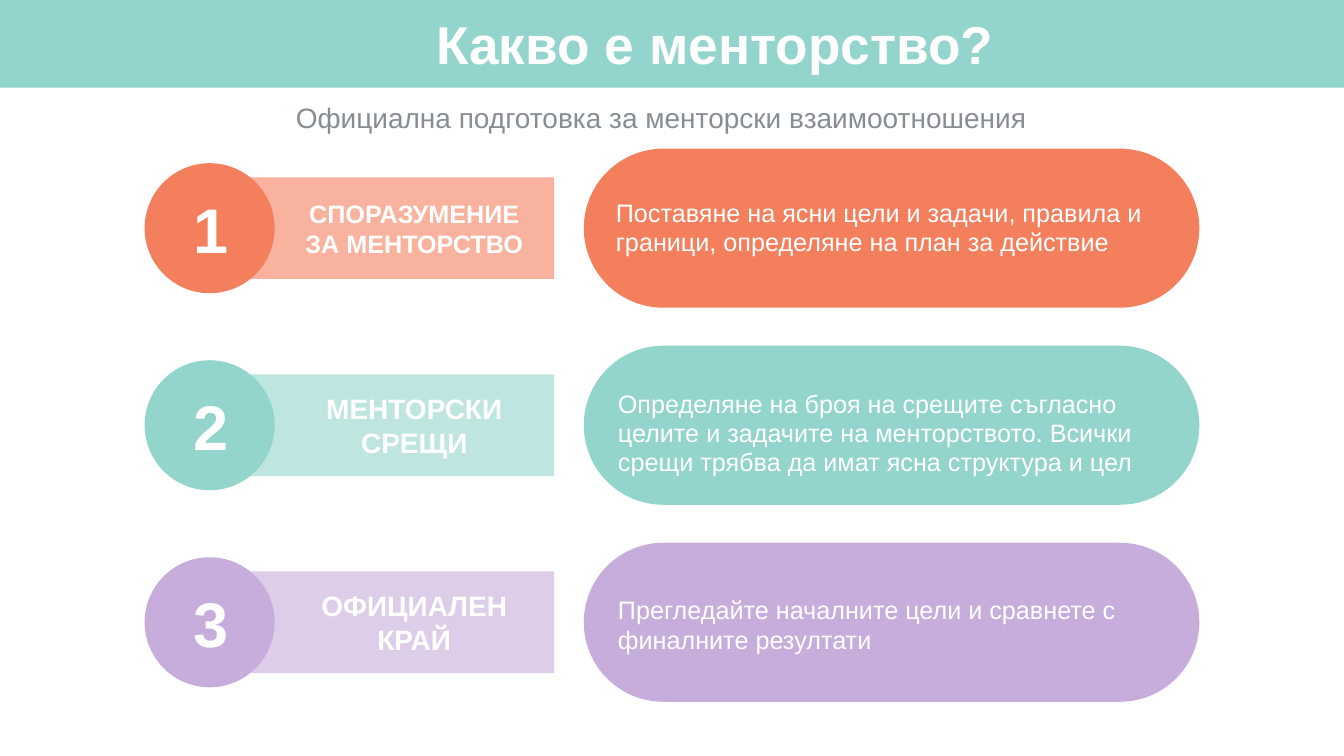
from dataclasses import dataclass

from lxml.etree import SubElement
from pptx import Presentation
from pptx.dml.color import RGBColor
from pptx.enum.shapes import MSO_SHAPE as Preset
from pptx.enum.text import MSO_ANCHOR as Anchor, MSO_AUTO_SIZE as AutoSize, PP_ALIGN as Align
from pptx.oxml.ns import qn
from pptx.util import Pt

TITLE = "Какво е менторство?"
SUBTITLE = "Официална подготовка за менторски взаимоотношения"


@dataclass(frozen=True)
class Theme:
    font: str = "Arial"
    white: str = "FFFFFF"
    grey: str = "868E93"
    coral: str = "F47F5D"
    mint: str = "93D4CC"
    lilac: str = "C7ADDB"
    title_size: float = 38
    subtitle_size: float = 20
    number_size: float = 45
    label_size: float = 20
    long_label_size: float = 18
    description_size: float = 18
    label_opacity: int = 60
    description_spacing: float = 0.97


@dataclass(frozen=True)
class Step:
    label: str
    description: str
    color: str
    label_size: float
    description_left: float
    description_width: float
    description_shift: float


theme = Theme()

STEPS = [
    Step("СПОРАЗУМЕНИЕ ЗА МЕНТОРСТВО",
         "Поставяне на ясни цели и задачи, правила и граници, определяне на план за действие",
         theme.coral, theme.long_label_size, 436.3, 400.3, 0),
    Step("МЕНТОРСКИ СРЕЩИ",
         "Определяне на броя на срещите съгласно целите и задачите на менторството. "
         "Всички срещи трябва да имат ясна структура и цел",
         theme.mint, theme.label_size, 437.8, 400.3, 6),
    Step("ОФИЦИАЛЕН КРАЙ",
         "Прегледайте началните цели и сравнете с финалните резултати",
         theme.lilac, theme.label_size, 437.8, 410.4, 2.5),
]

SLIDE_WIDTH, SLIDE_HEIGHT = 960, 540
BAND_HEIGHT = 62.6
FIRST_CENTER, ROW_PITCH = 163, 140.75
BAR_LEFT, BAR_WIDTH, BAR_HEIGHT = 161, 234.8, 72.6
CIRCLE_LEFT, CIRCLE_SIZE = 103.3, 92.9
PILL_LEFT, PILL_WIDTH, PILL_HEIGHT = 417, 439.7, 113.6
NUMBER_LEFT, NUMBER_WIDTH, NUMBER_HEIGHT = 131, 37.4, 62
LABEL_LEFT, LABEL_WIDTH, LABEL_HEIGHT = 208.8, 174.2, 55.4
DESCRIPTION_HEIGHT = 66

presentation = Presentation()
presentation.slide_width, presentation.slide_height = Pt(SLIDE_WIDTH), Pt(SLIDE_HEIGHT)
slide = presentation.slides.add_slide(presentation.slide_layouts[0])


def add_filled(preset, left, top, width, height, color, opacity=100):
    shape = slide.shapes.add_shape(preset, Pt(left), Pt(top), Pt(width), Pt(height))
    shape.shadow.inherit = False
    shape.line.fill.background()
    shape.fill.solid()
    shape.fill.fore_color.rgb = RGBColor.from_string(color)
    if opacity < 100:
        color_element = shape._element.spPr.find(qn("a:solidFill"))[0]
        SubElement(color_element, qn("a:alpha")).set("val", str(opacity * 1000))
    return shape


def write(shape, text, size, color=theme.white, bold=False, align=Align.CENTER,
          anchor=Anchor.MIDDLE, margins=(7.2, 3.6), spacing=1.0):
    frame = shape.text_frame
    frame.word_wrap = True
    frame.auto_size = AutoSize.NONE
    frame.vertical_anchor = anchor
    frame.margin_left = frame.margin_right = Pt(margins[0])
    frame.margin_top = frame.margin_bottom = Pt(margins[1])
    paragraph = frame.paragraphs[0]
    paragraph.alignment = align
    paragraph.line_spacing = spacing
    paragraph.space_before = Pt(0)
    run = paragraph.add_run()
    run.text = text
    run.font.name = theme.font
    run.font.size = Pt(size)
    run.font.bold = bold
    run.font.color.rgb = RGBColor.from_string(color)


def place(shape, left, top, width, height):
    shape.left, shape.top, shape.width, shape.height = Pt(left), Pt(top), Pt(width), Pt(height)


def add_text(left, center, width, height, text, size, **style):
    box = slide.shapes.add_textbox(Pt(left), Pt(center - height / 2), Pt(width), Pt(height))
    write(box, text, size, **style)


def add_step(number, step, center):
    add_filled(Preset.RECTANGLE, BAR_LEFT, center - BAR_HEIGHT / 2, BAR_WIDTH, BAR_HEIGHT,
               step.color, theme.label_opacity)
    add_filled(Preset.OVAL, CIRCLE_LEFT, center - CIRCLE_SIZE / 2, CIRCLE_SIZE, CIRCLE_SIZE,
               step.color)
    pill = add_filled(Preset.ROUNDED_RECTANGLE, PILL_LEFT, center - PILL_HEIGHT / 2,
                      PILL_WIDTH, PILL_HEIGHT, step.color)
    pill.adjustments[0] = 0.5
    add_text(NUMBER_LEFT, center, NUMBER_WIDTH, NUMBER_HEIGHT, str(number),
             theme.number_size, bold=True)
    add_text(LABEL_LEFT, center, LABEL_WIDTH, LABEL_HEIGHT, step.label,
             step.label_size, bold=True)
    add_text(step.description_left, center + step.description_shift, step.description_width,
             DESCRIPTION_HEIGHT, step.description, theme.description_size, align=Align.LEFT,
             margins=(3.6, 1.4), spacing=theme.description_spacing)


title, subtitle = slide.placeholders
band = add_filled(Preset.RECTANGLE, 0, 0, SLIDE_WIDTH, BAND_HEIGHT, theme.mint)
title._element.addprevious(band._element)

place(title, 267.8, 4.3, 486, 53.3)
write(title, TITLE, theme.title_size, bold=True, anchor=Anchor.TOP)
place(subtitle, 167.8, 68.4, 609, 31.7)
write(subtitle, SUBTITLE, theme.subtitle_size, theme.grey, anchor=Anchor.TOP)

for index, step in enumerate(STEPS):
    add_step(index + 1, step, FIRST_CENTER + index * ROW_PITCH)

presentation.save("out.pptx")
